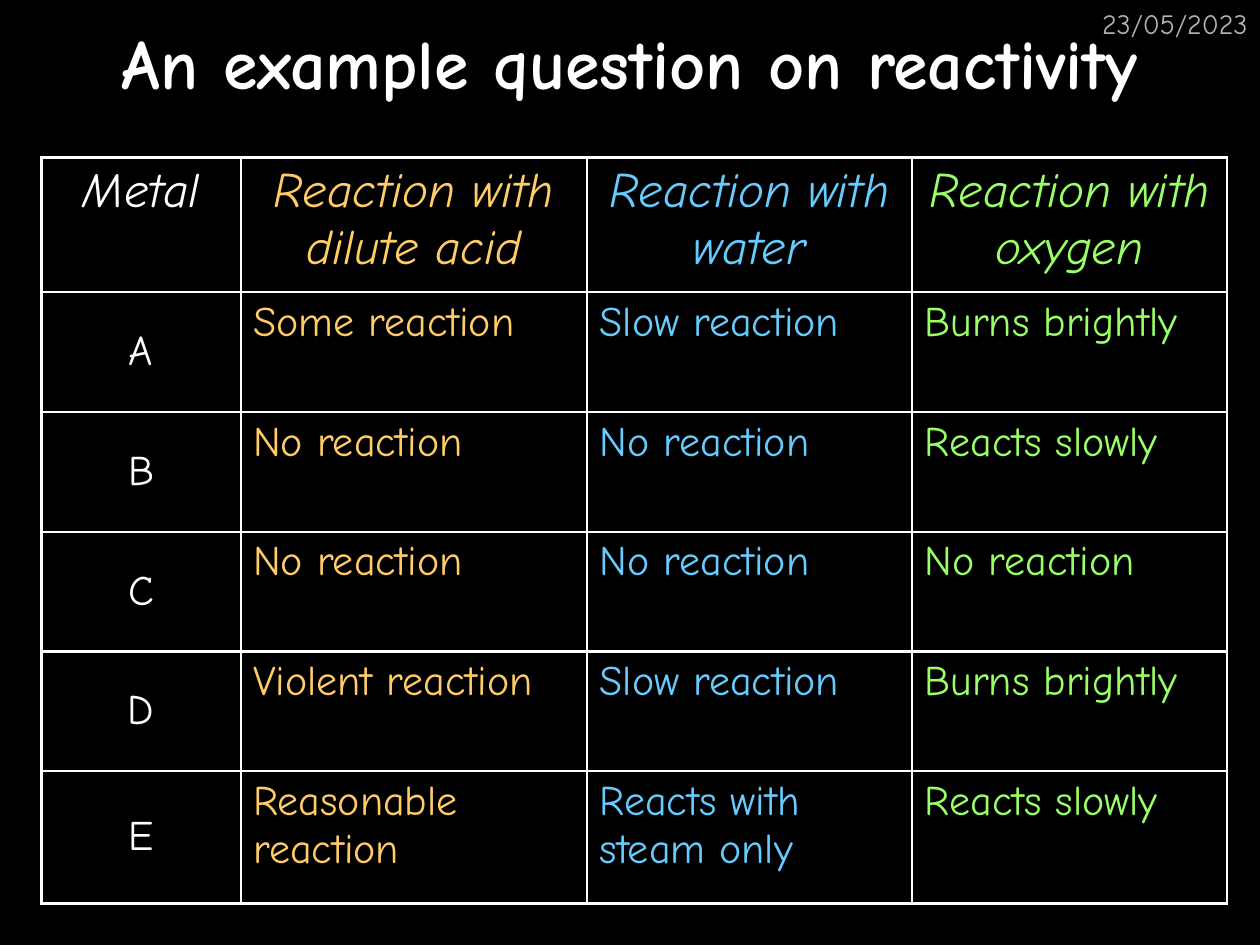
from lxml.etree import SubElement
from pptx import Presentation
from pptx.dml.color import RGBColor
from pptx.enum.text import MSO_ANCHOR as Anchor, PP_ALIGN as Align
from pptx.oxml.ns import qn
from pptx.util import Inches, Pt

COLOURS = {
    "background": "000000",
    "white": "FFFFFF",
    "date": "B2B2B2",
    "acid": "FFCC66",
    "water": "66CCFF",
    "oxygen": "99FF66",
}
COLUMN_COLOURS = ["white", "acid", "water", "oxygen"]
COLUMN_WIDTHS = [1.58, 2.75, 2.58, 2.5]
ROW_HEIGHTS = [1.07, 0.95, 0.95, 0.95, 0.95, 1.05]
REACTIONS = [
    ["Metal", "Reaction with dilute acid", "Reaction with water", "Reaction with oxygen"],
    ["A", "Some reaction", "Slow reaction", "Burns brightly"],
    ["B", "No reaction", "No reaction", "Reacts slowly"],
    ["C", "No reaction", "No reaction", "No reaction"],
    ["D", "Violent reaction", "Slow reaction", "Burns brightly"],
    ["E", "Reasonable reaction", "Reacts with steam only", "Reacts slowly"],
]


class SlideBuilder:
    font_name = "Comic Neue"
    border_width = Pt(1.5)

    def __init__(self, slide):
        self.slide = slide

    def background(self, colour):
        fill = self.slide.background.fill
        fill.solid()
        fill.fore_color.rgb = RGBColor.from_string(COLOURS[colour])

    def add_text(self, text_frame, text, size, colour, align, bold=False, italic=False):
        paragraph = text_frame.paragraphs[0]
        paragraph.alignment = align
        run = paragraph.add_run()
        run.text = text
        font = run.font
        font.name = self.font_name
        font.size = Pt(size)
        font.bold = bold
        font.italic = italic
        font.color.rgb = RGBColor.from_string(COLOURS[colour])

    def title(self, text, left, top, width, height):
        shape = self.slide.shapes.title
        shape.left, shape.top = Inches(left), Inches(top)
        shape.width, shape.height = Inches(width), Inches(height)
        shape.text_frame.vertical_anchor = Anchor.MIDDLE
        self.add_text(shape.text_frame, text, 40, "white", Align.CENTER, bold=True)

    def date(self, text, left, top, width, height):
        shape = self.slide.shapes.add_textbox(
            Inches(left), Inches(top), Inches(width), Inches(height))
        shape.text_frame.word_wrap = True
        self.add_text(shape.text_frame, text, 16, "date", Align.RIGHT)

    def borders(self, cell):
        properties = cell._tc.get_or_add_tcPr()
        for position, side in enumerate(["lnL", "lnR", "lnT", "lnB"]):
            line = SubElement(properties, qn(f"a:{side}"), w=str(self.border_width))
            properties.insert(position, line)
            fill = SubElement(line, qn("a:solidFill"))
            SubElement(fill, qn("a:srgbClr"), val=COLOURS["white"])

    def table(self, rows, left, top, widths, heights):
        frame = self.slide.shapes.add_table(
            len(rows), len(widths), Inches(left), Inches(top),
            Inches(sum(widths)), Inches(sum(heights)))
        table = frame.table
        table.first_row = False
        table.horz_banding = False
        for column, width in zip(table.columns, widths):
            column.width = Inches(width)
        for row, height in zip(table.rows, heights):
            row.height = Inches(height)
        for row_index, texts in enumerate(rows):
            for column_index, text in enumerate(texts):
                cell = table.cell(row_index, column_index)
                header = row_index == 0
                metal = column_index == 0
                cell.fill.background()
                cell.vertical_anchor = Anchor.MIDDLE if metal and not header else Anchor.TOP
                self.borders(cell)
                self.add_text(cell.text_frame, text, 28 if header else 24,
                              COLUMN_COLOURS[column_index],
                              Align.CENTER if header or metal else Align.LEFT,
                              italic=header)


def main():
    presentation = Presentation()
    presentation.slide_width = Inches(10)
    presentation.slide_height = Inches(7.5)
    slide = presentation.slides.add_slide(presentation.slide_layouts[5])
    builder = SlideBuilder(slide)
    builder.background("background")
    builder.date("23/05/2023", 7.92, 0, 2.08, 0.5)
    builder.title("An example question on reactivity", 0, 0, 10, 0.97)
    builder.table(REACTIONS, 0.33, 1.25, COLUMN_WIDTHS, ROW_HEIGHTS)
    presentation.save("out.pptx")


if __name__ == "__main__":
    main()
